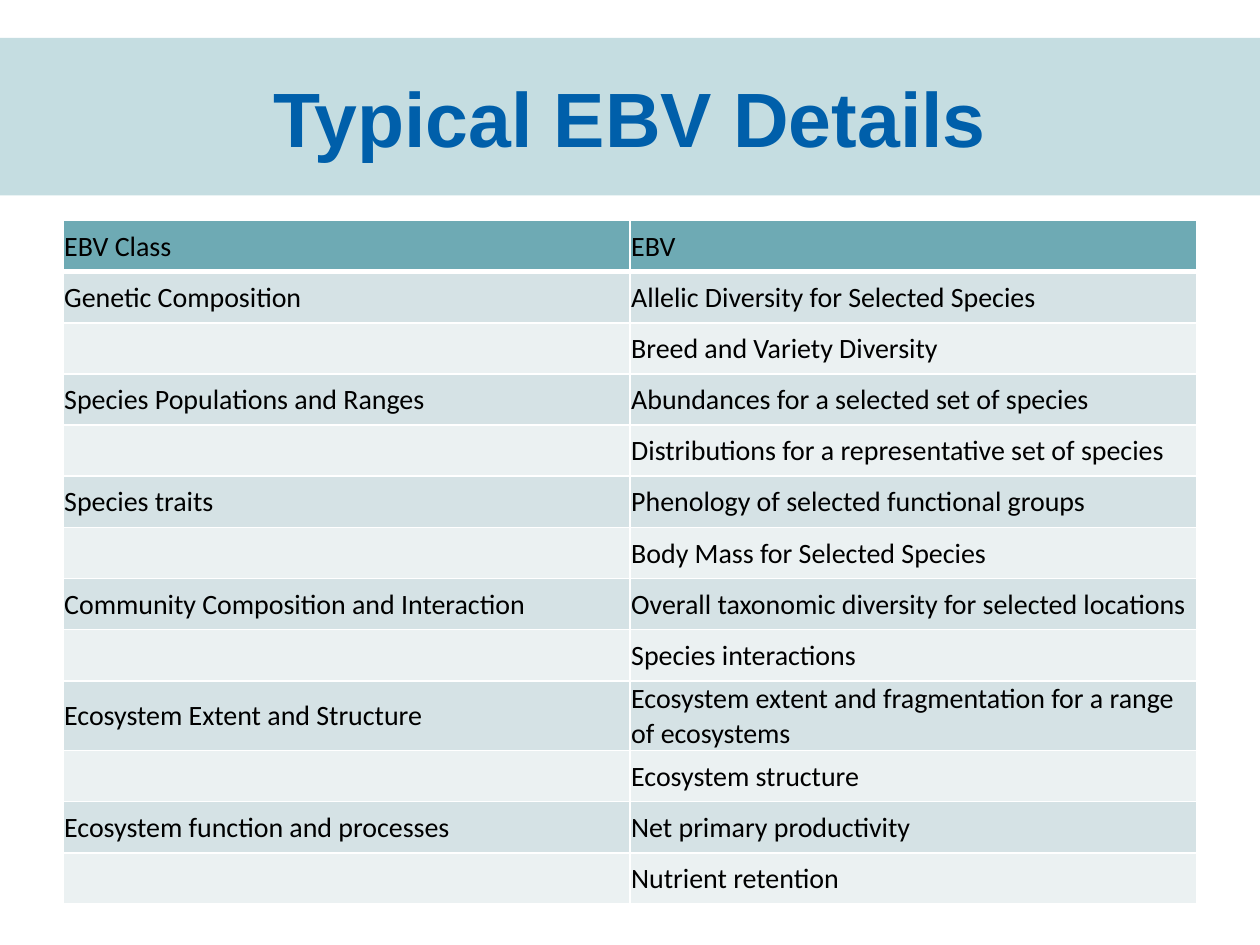
from lxml import etree
from pptx import Presentation
from pptx.dml.color import RGBColor
from pptx.enum.text import MSO_ANCHOR, PP_ALIGN
from pptx.oxml.ns import qn
from pptx.util import Inches, Pt

MIDDLE = MSO_ANCHOR.MIDDLE
LEFT, CENTER = PP_ALIGN.LEFT, PP_ALIGN.CENTER
WIDE, HIGH = Inches(10), Inches(7.5)
HEAD, DARK, PALE = "6EAAB4", "D5E2E5", "EBF1F2"
GROUPS = [
    ("Genetic Composition",
     ["Allelic Diversity for Selected Species", "Breed and Variety Diversity"]),
    ("Species Populations and Ranges",
     ["Abundances for a selected set of species",
      "Distributions for a representative set of species"]),
    ("Species traits",
     ["Phenology of selected functional groups", "Body Mass for Selected Species"]),
    ("Community Composition and Interaction",
     ["Overall taxonomic diversity for selected locations", "Species interactions"]),
    ("Ecosystem Extent and Structure",
     ["Ecosystem extent and fragmentation for a range of ecosystems",
      "Ecosystem structure"]),
    ("Ecosystem function and processes",
     ["Net primary productivity", "Nutrient retention"]),
]


def paint(fill, tint):
    """Fill with one solid colour given as a hex string."""
    fill.solid()
    fill.fore_color.rgb = RGBColor.from_string(tint)


def write(frame, text, size=16, font="Calibri", tint="000000", bold=False, align=LEFT):
    """Put one formatted run of text in a frame."""
    para = frame.paragraphs[0]
    para.alignment = align
    run = para.add_run()
    run.text = text
    run.font.size = Pt(size)
    run.font.name = font
    run.font.bold = bold
    paint(run.font.fill, tint)


def edge(cell, side, width, tint="FFFFFF"):
    """Draw one border of a cell."""
    line = etree.SubElement(cell._tc.get_or_add_tcPr(), qn("a:ln" + side), w=str(Pt(width)))
    fill = etree.SubElement(line, qn("a:solidFill"))
    etree.SubElement(fill, qn("a:srgbClr"), val=tint)


def banner(slide, box, text):
    """Format the title as a band across the given box."""
    title = slide.shapes.title
    title.left, title.top, title.width, title.height = box
    paint(title.fill, "C5DDE1")
    title.text_frame.vertical_anchor = MIDDLE
    write(title.text_frame, text, size=44, font="Arial", tint="005FAA", bold=True, align=CENTER)


def style(cell, row):
    """Set the margins, borders and banded fill of a cell."""
    cell.vertical_anchor = MIDDLE
    cell.margin_left = cell.margin_right = cell.margin_top = Inches(0.01)
    cell.margin_bottom = 0
    edge(cell, "L", 1)
    edge(cell, "R", 1)
    edge(cell, "T", 3 if row == 1 else 1)
    edge(cell, "B", 3 if row == 0 else 1)
    paint(cell.fill, HEAD if row == 0 else DARK if row % 2 else PALE)


def grid(slide, box, rows):
    """Fill the given box with a table of equal rows and columns."""
    table = slide.shapes.add_table(len(rows), len(rows[0]), *box).table
    for r, texts in enumerate(rows):
        for c, text in enumerate(texts):
            cell = table.cell(r, c)
            style(cell, r)
            if text:
                write(cell.text_frame, text)


def main():
    """Build and save the slide."""
    deck = Presentation()
    deck.slide_width, deck.slide_height = WIDE, HIGH
    slide = deck.slides.add_slide(deck.slide_layouts[5])
    banner(slide, (0, int(HIGH * 0.04), WIDE, Inches(1.25)), "Typical EBV Details")
    rows = [("EBV Class", "EBV")]
    for name, items in GROUPS:
        rows += [(name if i == 0 else "", item) for i, item in enumerate(items)]
    box = (int(WIDE * 0.05), Inches(1.75), int(WIDE * 0.9), Inches(5.28))
    grid(slide, box, rows)
    deck.save("out.pptx")


if __name__ == "__main__":
    main()
